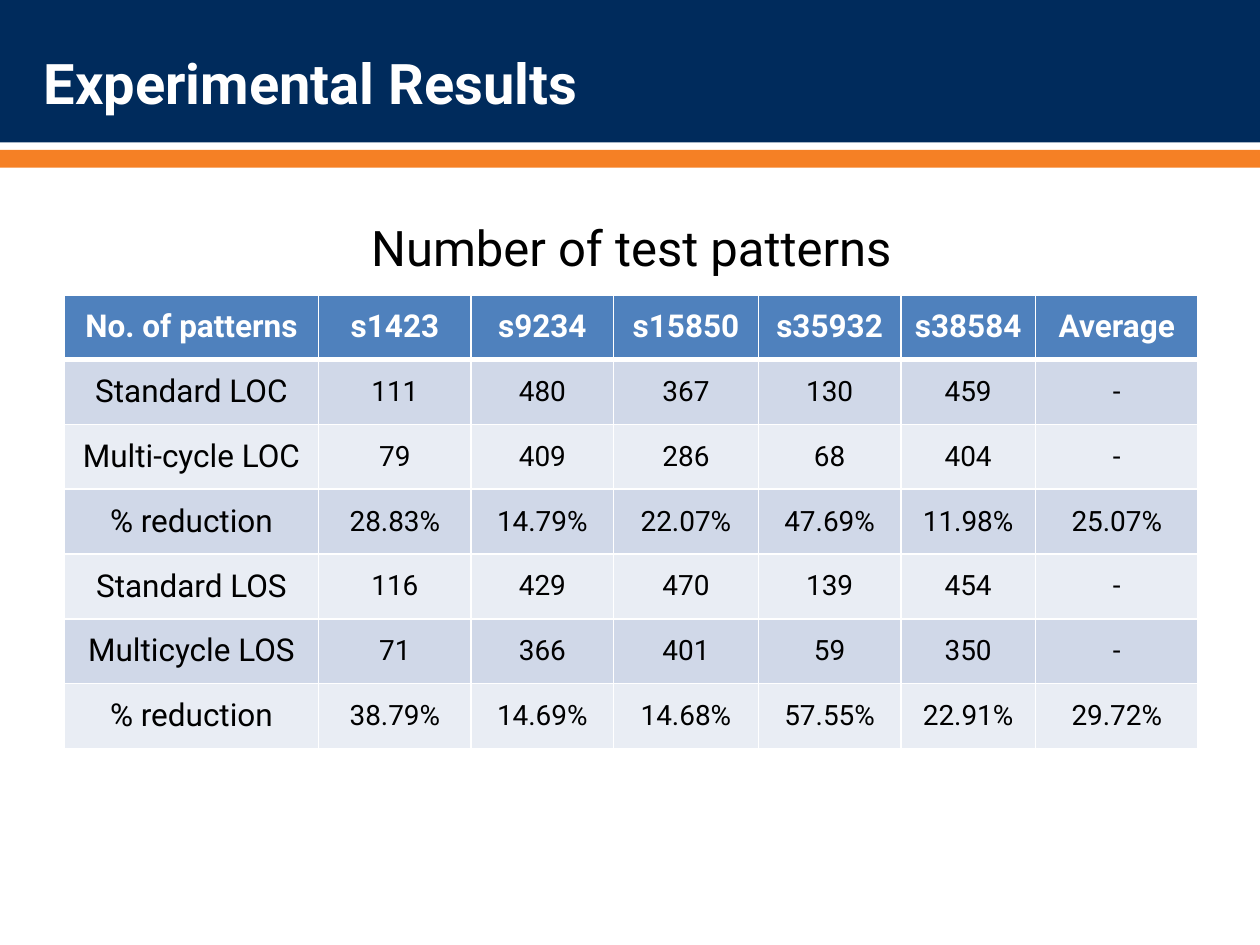
from lxml import etree
from pptx import Presentation
from pptx.dml.color import RGBColor
from pptx.enum.shapes import MSO_SHAPE
from pptx.enum.text import MSO_ANCHOR, PP_ALIGN
from pptx.oxml.ns import qn
from pptx.util import Inches, Pt

RECTANGLE = MSO_SHAPE.RECTANGLE
BOTTOM, MIDDLE, TOP = MSO_ANCHOR.BOTTOM, MSO_ANCHOR.MIDDLE, MSO_ANCHOR.TOP
LEFT, CENTER = PP_ALIGN.LEFT, PP_ALIGN.CENTER

FONT = "Roboto"
COLORS = {
    "navy": "002B5C",
    "orange": "F58025",
    "header": "4F81BD",
    "odd_row": "D0D8E8",
    "even_row": "E9EDF4",
    "white": "FFFFFF",
    "black": "000000",
}
COLUMN_WIDTHS = [2.02, 1.21, 1.13, 1.15, 1.13, 1.07, 1.29]
RESULTS = [
    ["No. of patterns", "s1423", "s9234", "s15850", "s35932", "s38584", "Average"],
    ["Standard LOC", "111", "480", "367", "130", "459", "-"],
    ["Multi-cycle LOC", "79", "409", "286", "68", "404", "-"],
    ["% reduction", "28.83%", "14.79%", "22.07%", "47.69%", "11.98%", "25.07%"],
    ["Standard LOS", "116", "429", "470", "139", "454", "-"],
    ["Multicycle LOS", "71", "366", "401", "59", "350", "-"],
    ["% reduction", "38.79%", "14.69%", "14.68%", "57.55%", "22.91%", "29.72%"],
]


def rgb(name):
    return RGBColor.from_string(COLORS[name])


def write(frame, text, size, color, bold=False, align=CENTER):
    frame.text = text
    paragraph = frame.paragraphs[0]
    paragraph.alignment = align
    font = paragraph.runs[0].font
    font.name, font.size, font.bold = FONT, Pt(size), bold
    font.color.rgb = rgb(color)


def add_band(slide, left, top, width, height, color):
    band = slide.shapes.add_shape(
        RECTANGLE, Inches(left), Inches(top), Inches(width), Inches(height))
    band.shadow.inherit = False
    band.fill.solid()
    band.fill.fore_color.rgb = rgb(color)
    band.line.fill.background()


def add_label(slide, left, top, width, height, text, size, color,
              bold=False, align=CENTER, anchor=TOP):
    label = slide.shapes.add_textbox(
        Inches(left), Inches(top), Inches(width), Inches(height))
    frame = label.text_frame
    frame.word_wrap = True
    frame.vertical_anchor = anchor
    write(frame, text, size, color, bold, align)


def add_heading(slide, left, top, width, height):
    add_band(slide, left, top, width, height - 0.2, "navy")
    add_band(slide, left, top + height - 0.14, width, 0.14, "orange")
    add_label(slide, left + 0.25, top - 0.28, width - 0.47, 1.25,
              "Experimental Results", 32, "white", True, LEFT, BOTTOM)


def set_borders(cell, top, bottom):
    properties = cell._tc.get_or_add_tcPr()
    widths = {"a:lnL": 1, "a:lnR": 1, "a:lnT": top, "a:lnB": bottom}
    for position, (side, width) in enumerate(widths.items()):
        line = etree.Element(qn(side), w=str(Pt(width)))
        fill = etree.SubElement(line, qn("a:solidFill"))
        etree.SubElement(fill, qn("a:srgbClr"), val=COLORS["white"])
        properties.insert(position, line)


def add_results_table(slide, left, top, width, height):
    table = slide.shapes.add_table(
        len(RESULTS), len(COLUMN_WIDTHS),
        Inches(left), Inches(top), Inches(width), Inches(height)).table
    for column, column_width in zip(table.columns, COLUMN_WIDTHS):
        column.width = Inches(column_width)
    for r, values in enumerate(RESULTS):
        table.rows[r].height = Inches(height / len(RESULTS))
        is_header = r == 0
        background = "header" if is_header else "odd_row" if r % 2 else "even_row"
        for c, value in enumerate(values):
            cell = table.cell(r, c)
            cell.vertical_anchor = MIDDLE
            cell.fill.solid()
            cell.fill.fore_color.rgb = rgb(background)
            set_borders(cell, 3 if r == 1 else 1, 3 if is_header else 1)
            write(cell.text_frame, value, 18 if is_header or c == 0 else 16,
                  "white" if is_header else "black", is_header)


def main():
    presentation = Presentation()
    presentation.slide_width = Inches(10)
    presentation.slide_height = Inches(7.5)
    slide = presentation.slides.add_slide(presentation.slide_layouts[6])
    add_heading(slide, 0, 0, 10, 1.33)
    add_results_table(slide, 0.51, 2.34, 9, 3.6)
    add_label(slide, 0.51, 1.68, 9, 0.57, "Number of test patterns", 28, "black")
    presentation.save("out.pptx")


if __name__ == "__main__":
    main()
